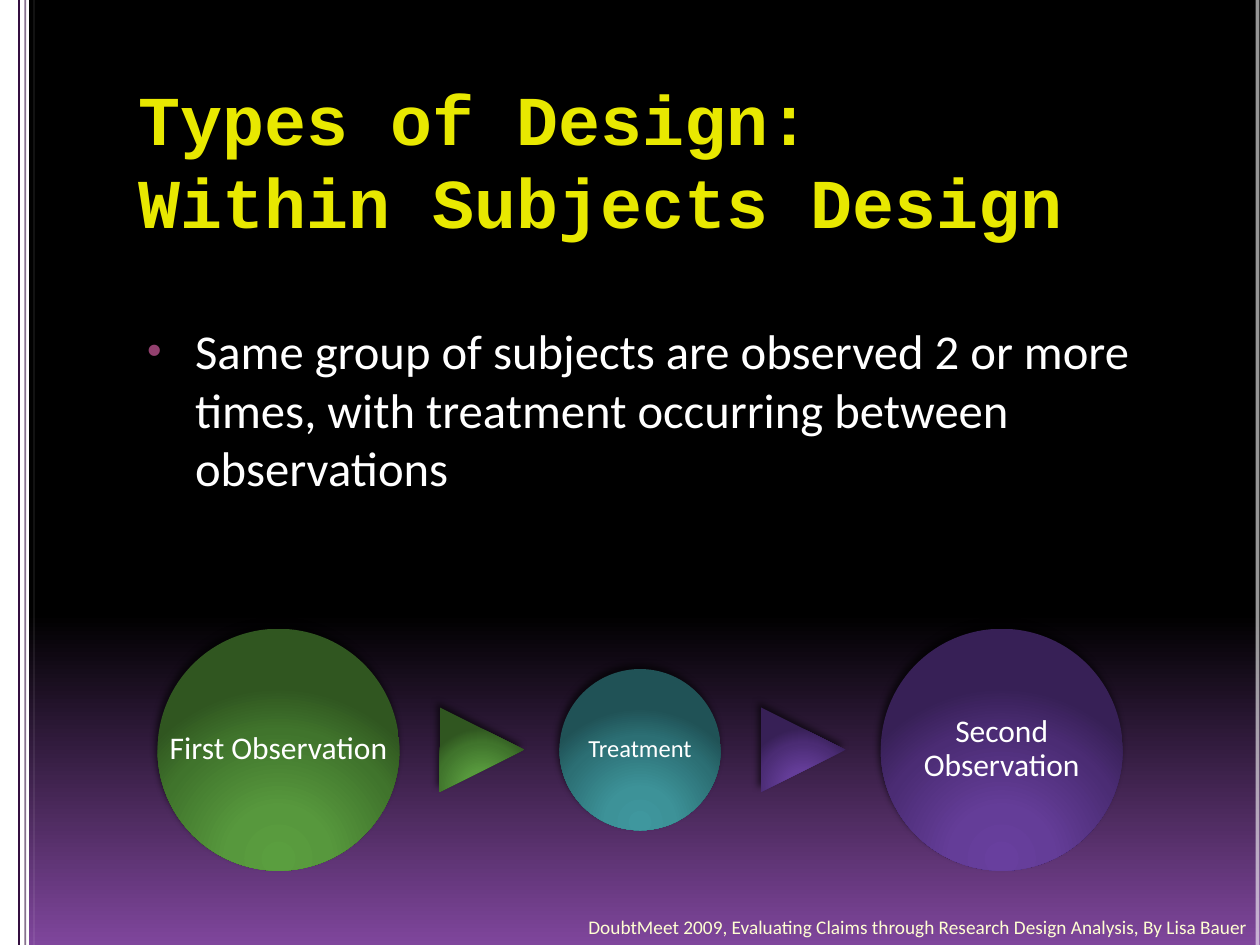
from lxml import etree
from pptx import Presentation, util as u
from pptx.dml.color import RGBColor
from pptx.enum import shapes, text
from pptx.oxml import parse_xml
from pptx.oxml.ns import nsdecls, qn

WIDTH, HEIGHT = 10, 7.5
COLORS = {
    "white": "FFFFFF", "plum": "340F40", "title": "E8E800",
    "bullet": "92406E", "footer": "FFFFD2", "black": "000000",
}
BACKDROP = [(0, "000000"), (65, "000000"), (100, "7F469C")]
GLOWS = {
    "green": [(0, "5A9E3F"), (30, "57983D"), (75, "40742C"), (100, "305620")],
    "teal": [(0, "3F979E"), (30, "3D9298"), (75, "2C6F74"), (100, "205256")],
    "purple": [(0, "683F9E"), (30, "643D98"), (75, "4B2C74"), (100, "372056")],
}
LINEAR = '<a:lin ang="5400000" scaled="0"/>'
RADIAL = ('<a:path path="circle">'
          '<a:fillToRect l="50000" t="100000" r="50000" b="10000"/></a:path>')
RULES = [(0.15, "plum", 1, 100), (0.2, "plum", 1, 59),
         (0.27, "white", 0.25, 59), (9.98, "white", 2.25, 59)]
STEPS = [
    ("circle", 1.92, "green", "First Observation", 18),
    ("arrow", 0.67, "green", None, None),
    ("circle", 1.28, "teal", "Treatment", 14),
    ("arrow", 0.67, "purple", None, None),
    ("circle", 1.92, "purple", "Second Observation", 18),
]
CHAIN_LEFT, CHAIN_MIDDLE = 1.25, 5.95
GAP_AFTER = {"circle": 0.32, "arrow": 0.28}


def rgb(name):
    return RGBColor.from_string(COLORS[name])


def box(left, top, width, height):
    return [u.Inches(value) for value in (left, top, width, height)]


def set_gradient(fill, properties, stops, shade):
    fill.solid()
    listed = "".join(
        f'<a:gs pos="{share * 1000}"><a:srgbClr val="{color}"/></a:gs>'
        for share, color in stops)
    gradient = parse_xml(
        f'<a:gradFill {nsdecls("a")} rotWithShape="0">'
        f'<a:gsLst>{listed}</a:gsLst>{shade}</a:gradFill>')
    solid = properties.find(qn("a:solidFill"))
    properties.replace(solid, gradient)


def add_shadow(shape):
    shape.shadow.inherit = False
    effects = shape._element.spPr.find(qn("a:effectLst"))
    effects.append(parse_xml(
        f'<a:outerShdw {nsdecls("a")} blurRad="{u.Pt(4)}" dist="{u.Pt(3)}" '
        f'dir="{245 * 60000}" rotWithShape="0">'
        f'<a:srgbClr val="{COLORS["black"]}"><a:alpha val="60000"/></a:srgbClr>'
        '</a:outerShdw>'))


def add_rule(slide, x, color, weight, opacity):
    rule = slide.shapes.add_connector(
        shapes.MSO_CONNECTOR.STRAIGHT,
        u.Inches(x), 0, u.Inches(x), u.Inches(HEIGHT))
    rule.line.color.rgb = rgb(color)
    rule.line.width = u.Pt(weight)
    properties = rule._element.spPr
    tint = properties.find(".//" + qn("a:srgbClr"))
    etree.SubElement(tint, qn("a:alpha")).set("val", str(opacity * 1000))
    etree.SubElement(properties, qn("a:effectLst"))


def add_words(slide, place, words, size, color="white", font="Calibri",
              bold=False, align=text.PP_ALIGN.LEFT,
              anchor=text.MSO_ANCHOR.TOP, inset=None):
    frame = slide.shapes.add_textbox(*box(*place)).text_frame
    frame.word_wrap = True
    frame.vertical_anchor = anchor
    if inset is not None:
        frame.margin_left = frame.margin_right = u.Inches(inset)
        frame.margin_top = frame.margin_bottom = u.Inches(inset)
    paragraph = frame.paragraphs[0]
    paragraph.text = words
    paragraph.alignment = align
    for run in paragraph.runs:
        run.font.name = font
        run.font.size = u.Pt(size)
        run.font.bold = bold
        run.font.color.rgb = rgb(color)
    return paragraph


def add_bullet(paragraph):
    properties = paragraph._p.get_or_add_pPr()
    properties.set("marL", str(u.Inches(0.45)))
    properties.set("indent", str(u.Inches(-0.38)))
    color = etree.SubElement(properties, qn("a:buClr"))
    etree.SubElement(color, qn("a:srgbClr")).set("val", COLORS["bullet"])
    etree.SubElement(properties, qn("a:buSzPct")).set("val", "85000")
    etree.SubElement(properties, qn("a:buFont")).set("typeface", "Arial")
    etree.SubElement(properties, qn("a:buChar")).set("char", "•")


def add_step(slide, left, kind, size, glow, label, label_size):
    preset = {"circle": shapes.MSO_SHAPE.OVAL,
              "arrow": shapes.MSO_SHAPE.ISOSCELES_TRIANGLE}[kind]
    place = (left, CHAIN_MIDDLE - size / 2, size, size)
    step = slide.shapes.add_shape(preset, *box(*place))
    step.rotation = 90 if kind == "arrow" else 0
    set_gradient(step.fill, step._element.spPr, GLOWS[glow], RADIAL)
    step.line.fill.background()
    add_shadow(step)
    if label:
        paragraph = add_words(slide, place, label, label_size,
                              align=text.PP_ALIGN.CENTER,
                              anchor=text.MSO_ANCHOR.MIDDLE, inset=0.03)
        paragraph.line_spacing = 0.9


def add_frame(slide):
    fill = slide.background.fill
    fill.solid()
    properties = slide._element.cSld.find(qn("p:bg")).find(qn("p:bgPr"))
    set_gradient(fill, properties, BACKDROP, LINEAR)
    margin = slide.shapes.add_shape(
        shapes.MSO_SHAPE.RECTANGLE, *box(0, 0, 0.23, HEIGHT))
    margin.shadow.inherit = False
    margin.fill.solid()
    margin.fill.fore_color.rgb = rgb("white")
    margin.line.fill.background()
    for rule in RULES:
        add_rule(slide, *rule)


def main():
    deck = Presentation()
    deck.slide_width, deck.slide_height = u.Inches(WIDTH), u.Inches(HEIGHT)
    slide = deck.slides.add_slide(deck.slide_layouts[6])
    add_frame(slide)

    title = add_words(slide, (1, 0.56, 8.5, 1.4),
                      "Types of Design:\vWithin Subjects Design",
                      40, "title", "Courier New", bold=True)
    title.line_spacing = u.Pt(47.5)

    definition = add_words(
        slide, (1, 2.5, 8.17, 1.42),
        "Same group of subjects are observed 2 or more times, "
        "with treatment occurring between observations", 27.8)
    definition.space_before = u.Pt(7)
    add_bullet(definition)

    left = CHAIN_LEFT
    for kind, size, *details in STEPS:
        add_step(slide, left, kind, size, *details)
        left += size + GAP_AFTER[kind]

    add_words(slide, (3.92, 7.1, 6.08, 0.4),
              "DoubtMeet 2009, Evaluating Claims through Research "
              "Design Analysis, By Lisa Bauer", 11, "footer",
              align=text.PP_ALIGN.RIGHT, anchor=text.MSO_ANCHOR.BOTTOM)
    deck.save("out.pptx")


if __name__ == "__main__":
    main()
